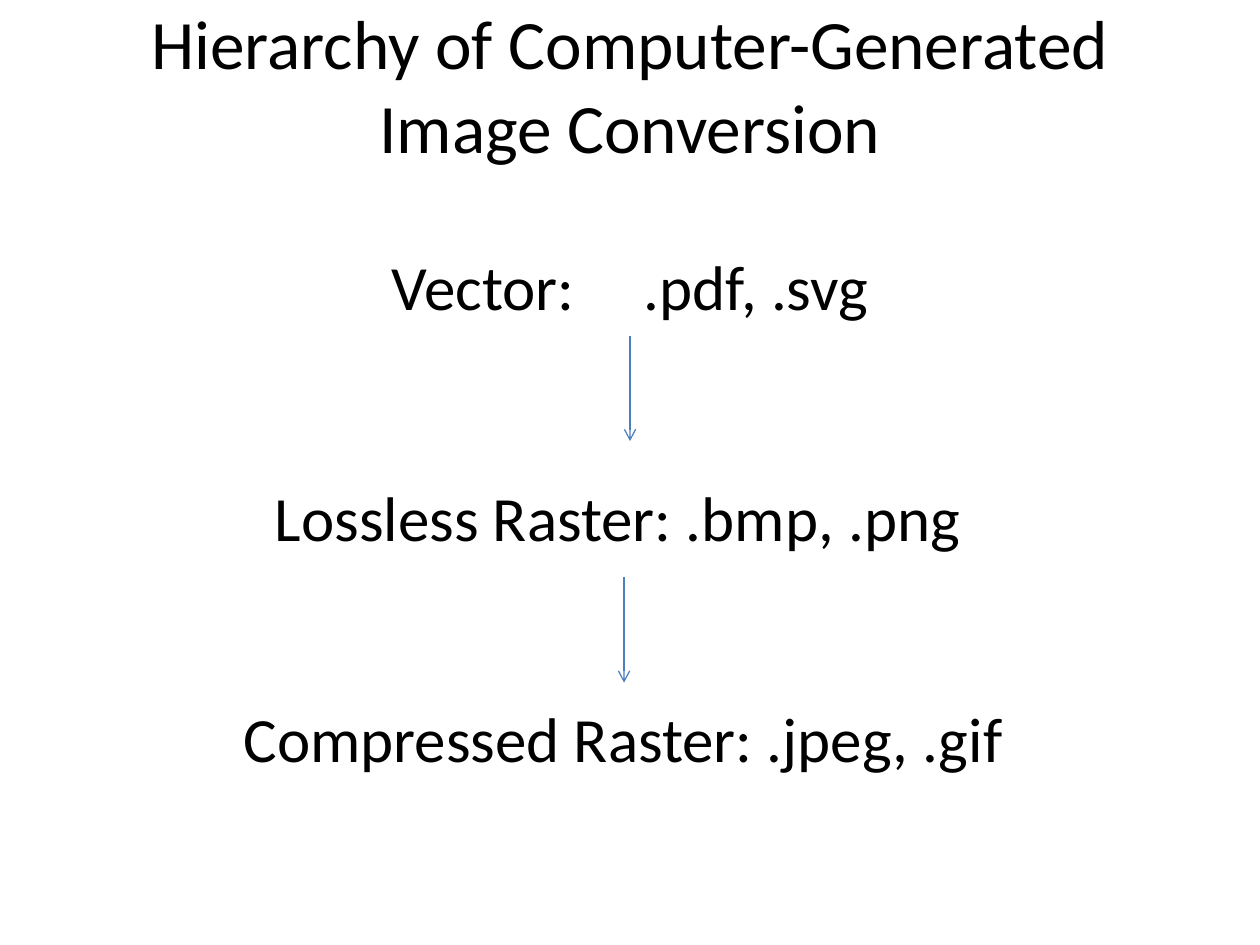
from pptx import Presentation
from pptx.dml.color import RGBColor
from pptx.enum.shapes import MSO_CONNECTOR as Link
from pptx.enum.text import MSO_ANCHOR as Anchor, PP_ALIGN as Align
from pptx.oxml.ns import qn
from pptx.util import Cm, Pt
from lxml.etree import SubElement


def color(code):
    return RGBColor.from_string(code)


class Deck:
    font = "Calibri"
    ink = "000000"
    paper = "FFFFFF"
    blue = "4B7EBC"

    def __init__(self, wide, high):
        self.file = Presentation()
        self.file.slide_width = Cm(wide)
        self.file.slide_height = Cm(high)
        self.slide = self.file.slides.add_slide(self.file.slide_layouts[6])
        fill = self.slide.background.fill
        fill.solid()
        fill.fore_color.rgb = color(self.paper)

    def text(self, words, x, y, w, h, size=36, align=Align.LEFT,
             anchor=Anchor.TOP):
        box = self.slide.shapes.add_textbox(Cm(x), Cm(y), Cm(w), Cm(h))
        frame = box.text_frame
        frame.word_wrap = True
        frame.vertical_anchor = anchor
        para = frame.paragraphs[0]
        para.text = words
        para.alignment = align
        para.font.name = self.font
        para.font.size = Pt(size)
        para.font.color.rgb = color(self.ink)

    def arrow(self, x, top, drop):
        link = self.slide.shapes.add_connector(
            Link.STRAIGHT, Cm(x), Cm(top), Cm(x), Cm(top + drop))
        link.line.color.rgb = color(self.blue)
        link.line.width = Pt(0.75)
        props = link._element.spPr
        SubElement(props.find(qn("a:ln")), qn("a:tailEnd"), type="arrow")
        SubElement(props, qn("a:effectLst"))


def main():
    deck = Deck(25.4, 19.05)

    # Title
    deck.text("Hierarchy of Computer-Generated Image Conversion",
              1.27, 0.1, 22.86, 3.18, 39.6, Align.CENTER, Anchor.MIDDLE)

    # Levels, from best to most reduced
    levels = [
        ("Vector: \t.pdf, .svg", 7.2, 4.87, 11, Align.CENTER),
        ("Lossless Raster: .bmp, .png", 5.29, 9.53, 14.82, Align.LEFT),
        ("Compressed Raster: .jpeg, .gif", 4.66, 13.97, 15.88, Align.LEFT),
    ]
    for words, x, y, w, align in levels:
        deck.text(words, x, y, w, 1.7, align=align)

    # Arrows between levels
    for x, top in [(12.7, 6.77), (12.58, 11.64)]:
        deck.arrow(x, top, 2.12)

    deck.file.save("out.pptx")


if __name__ == "__main__":
    main()
